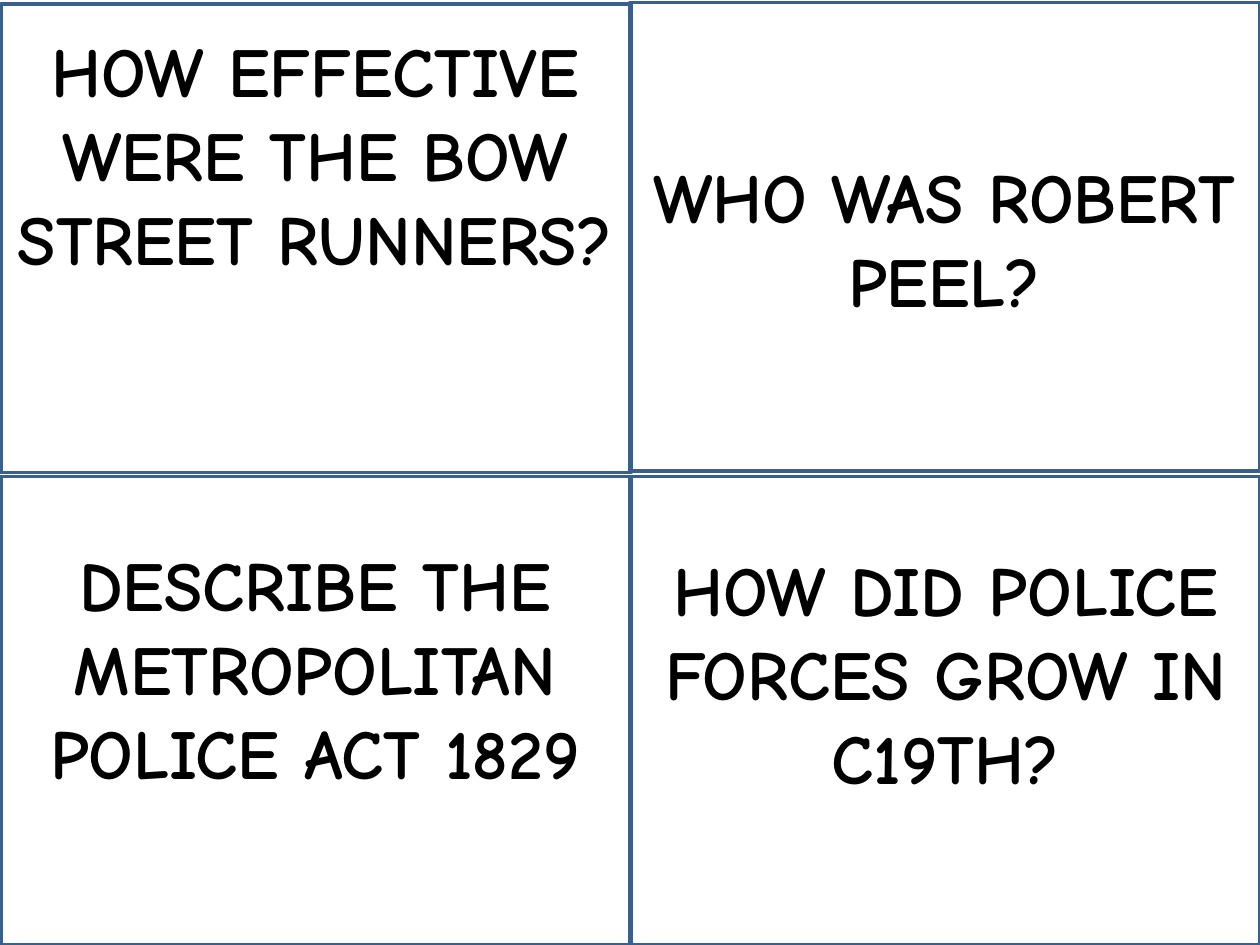
from dataclasses import dataclass
from pptx import Presentation
from pptx.dml.color import RGBColor
from pptx.enum.shapes import MSO_SHAPE as Shape
from pptx.enum.text import MSO_AUTO_SIZE as Fit, PP_ALIGN as Align
from pptx.util import Pt

WIDE, HIGH = 360, 267.84
FONT = {"name": "Comic Neue", "size": Pt(40), "bold": True}
FRAME = {"word_wrap": True, "auto_size": Fit.SHAPE_TO_FIT_TEXT}


@dataclass
class Card:
    left: float
    top: float
    text: str
    box: tuple[float, float, float, float]


CARDS = [
    Card(360, 1.44, "WHO WAS ROBERT PEEL?", (359.28, 84.24, 360.72, 104.4)),
    Card(360, 272.16, "HOW DID POLICE FORCES GROW IN C19TH?",
         (360.72, 308.88, 359.28, 200.88)),
    Card(0.72, 2.16, "HOW EFFECTIVE WERE THE BOW STREET RUNNERS?",
         (0, 12.24, 360, 249.84)),
    Card(0.72, 272.16, "DESCRIBE THE METROPOLITAN POLICE ACT 1829",
         (0.72, 306, 358.56, 200.88)),
]


def paint(color, code: str) -> None:
    color.rgb = RGBColor.from_string(code)


def style(item, values: dict) -> None:
    for key, value in values.items():
        setattr(item, key, value)


def draw_edge(slide, card: Card) -> None:
    edge = slide.shapes.add_shape(
        Shape.RECTANGLE, Pt(card.left), Pt(card.top), Pt(WIDE), Pt(HIGH))
    edge.shadow.inherit = False
    edge.fill.background()
    edge.line.width = Pt(2)
    paint(edge.line.color, "3A5F8C")


def draw_text(slide, card: Card) -> None:
    frame = slide.shapes.add_textbox(*map(Pt, card.box)).text_frame
    style(frame, FRAME)
    para = frame.paragraphs[0]
    para.alignment = Align.CENTER
    run = para.add_run()
    run.text = card.text
    style(run.font, FONT)
    paint(run.font.color, "000000")


def main() -> None:
    deck = Presentation()
    style(deck, {"slide_width": Pt(720), "slide_height": Pt(540)})
    slide = deck.slides.add_slide(deck.slide_layouts[6])
    for draw in (draw_edge, draw_text):
        for card in CARDS:
            draw(slide, card)
    deck.save("out.pptx")


if __name__ == "__main__":
    main()
